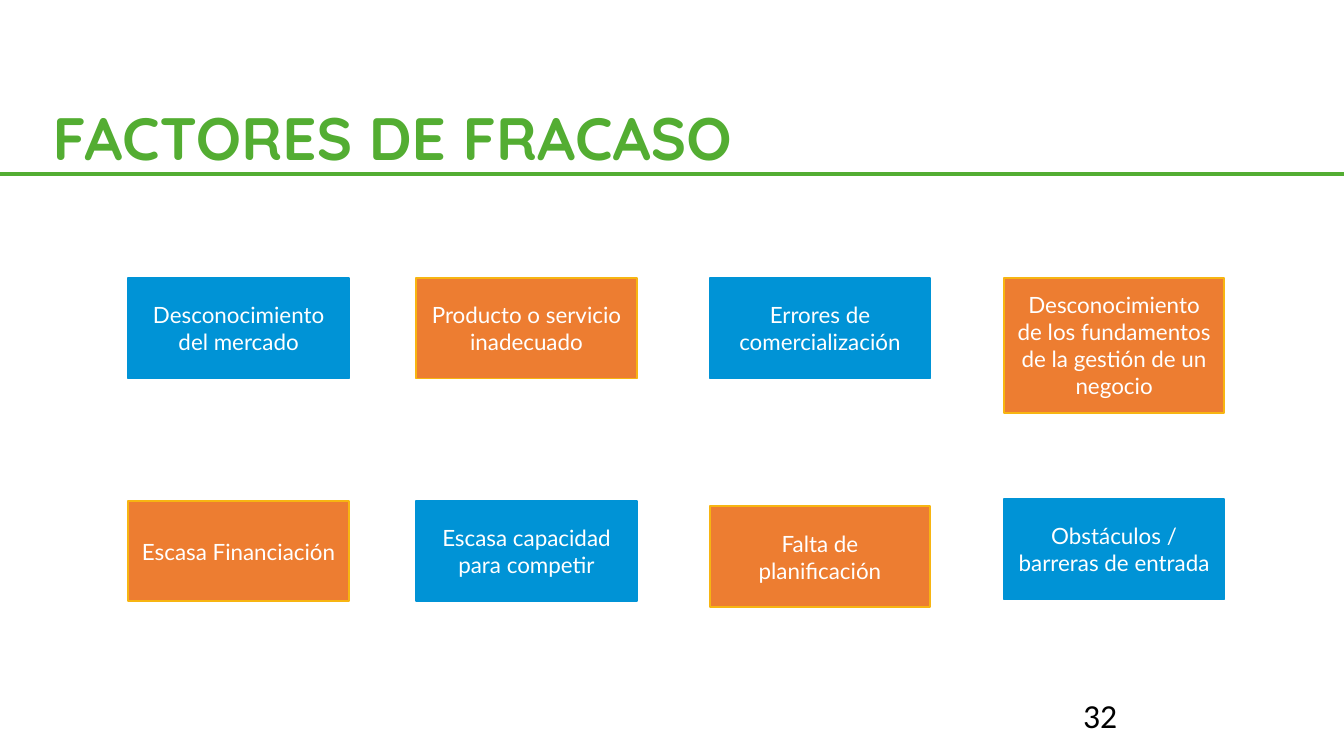
from pptx import Presentation
from pptx.dml.color import RGBColor
from pptx.enum.shapes import MSO_CONNECTOR, MSO_SHAPE
from pptx.enum.text import MSO_ANCHOR, PP_ALIGN
from pptx.oxml.ns import qn
from pptx.util import Pt

LEFT, CENTER = PP_ALIGN.LEFT, PP_ALIGN.CENTER
MIDDLE, BOTTOM = MSO_ANCHOR.MIDDLE, MSO_ANCHOR.BOTTOM
RECTANGLE, STRAIGHT = MSO_SHAPE.RECTANGLE, MSO_CONNECTOR.STRAIGHT

GREEN, WHITE, BLACK = "53AD32", "FFFFFF", "000000"
BLUE_STYLE = ("0093D6", "0093D6")  # fill, line
ORANGE_STYLE = ("ED7D31", "F7B512")


def color(hex_string):
    return RGBColor.from_string(hex_string)


def write(shape, lines, size, font, ink, align=CENTER, anchor=MIDDLE,
          bold=False, spacing=1.0):
    frame = shape.text_frame
    frame.word_wrap = True
    frame.vertical_anchor = anchor
    frame.text = "\n".join(lines)
    for para in frame.paragraphs:
        para.alignment = align
        para.line_spacing = spacing
        for span in para.runs:
            span.font.size = Pt(size)
            span.font.name = font
            span.font.bold = bold
            span.font.color.rgb = color(ink)


deck = Presentation()
deck.slide_width, deck.slide_height = Pt(720), Pt(405)
page = deck.slides.add_slide(deck.slide_layouts[5])

# Title
title = page.shapes.title
title.left, title.top, title.width, title.height = Pt(21), Pt(36.7), Pt(678), Pt(77.8)
write(title, ["FACTORES DE FRACASO"], 32, "Quicksand", GREEN,
      align=LEFT, bold=True, spacing=0.9)

# Rule under the title
rule = page.shapes.add_connector(STRAIGHT, Pt(0), Pt(93.4), Pt(720), Pt(93.4))
rule.line.color.rgb = color(GREEN)
rule.line.width = Pt(2)
rule._element.spPr.append(rule._element.spPr.makeelement(qn("a:effectLst"), {}))

# Factor boxes: text lines, top and height; the colours alternate
column_lefts = [68.8, 223, 380.2, 537.8]
factor_rows = [
    [(["Desconocimiento", "del mercado"], 148.8, 54),
     (["Producto o servicio inadecuado"], 148.8, 54),
     (["Errores de comercialización"], 148.8, 54),
     (["Desconocimiento de los fundamentos de la gestión de un negocio"], 148.8, 72.5)],
    [(["Escasa Financiación"], 268.2, 54),
     (["Escasa capacidad para competir"], 268.2, 54),
     (["Falta de planificación"], 271.2, 54),
     (["Obstáculos / barreras de entrada"], 267.2, 54)],
]
for row, factors in enumerate(factor_rows):
    for column, (lines, top, height) in enumerate(factors):
        fill, border = ORANGE_STYLE if (row + column) % 2 else BLUE_STYLE
        box = page.shapes.add_shape(RECTANGLE, Pt(column_lefts[column]), Pt(top),
                                    Pt(118.2), Pt(height))
        box.shadow.inherit = False
        box.fill.solid()
        box.fill.fore_color.rgb = color(fill)
        box.line.color.rgb = color(border)
        box.line.width = Pt(1)
        write(box, lines, 12, "Lato", WHITE)

# Page number
number = page.shapes.add_textbox(Pt(508.3), Pt(375.8), Pt(162), Pt(21.6))
write(number, ["32"], 18, "Calibri", BLACK, anchor=BOTTOM)

deck.save("out.pptx")
